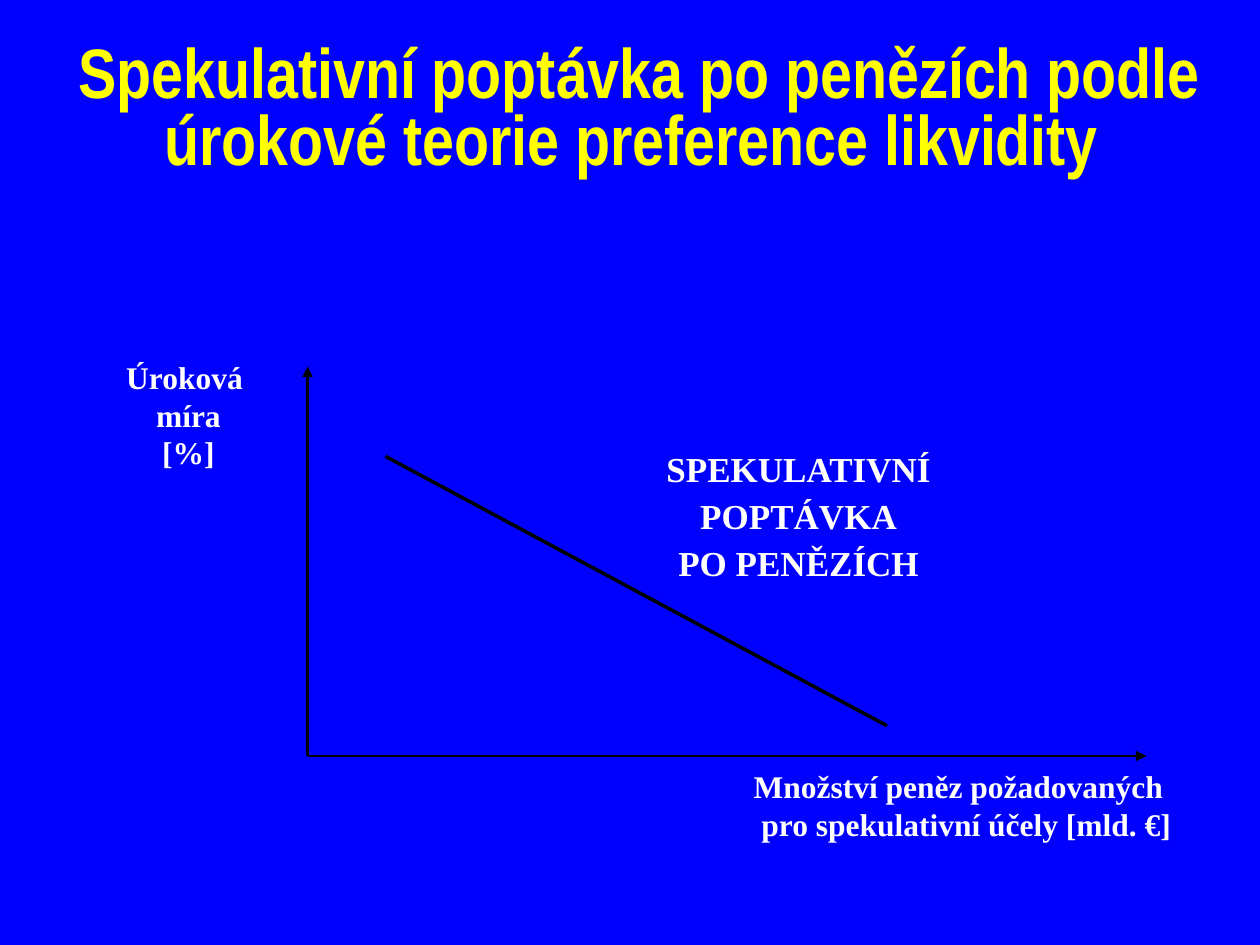
from lxml import etree
from pptx import Presentation
from pptx.dml.color import RGBColor
from pptx.enum.shapes import MSO_CONNECTOR
from pptx.enum.text import MSO_ANCHOR, PP_ALIGN
from pptx.oxml.ns import qn
from pptx.util import Cm, Pt

STRAIGHT = MSO_CONNECTOR.STRAIGHT
CENTER = PP_ALIGN.CENTER
TOP, MIDDLE = MSO_ANCHOR.TOP, MSO_ANCHOR.MIDDLE

BLUE = RGBColor(0x00, 0x00, 0xFF)
YELLOW = RGBColor(0xFF, 0xFF, 0x00)
WHITE = RGBColor(0xFF, 0xFF, 0xFF)
BLACK = RGBColor(0x00, 0x00, 0x00)

ORIGIN = (6.2, 15.24)
RATE_AXIS_END = (6.2, 7.39)
MONEY_AXIS_END = (23.11, 15.24)
DEMAND_START, DEMAND_END = (7.77, 9.2), (17.88, 14.63)


def write_text(text_frame, text, font="Times New Roman", size=18, color=WHITE,
               space_before=0, line_spacing=1.0):
    for index, line in enumerate(text.split("\n")):
        paragraph = text_frame.add_paragraph() if index else text_frame.paragraphs[0]
        paragraph.text = line
        paragraph.alignment = CENTER
        paragraph.line_spacing = line_spacing
        paragraph.space_before = Pt(space_before if index else 0)
        for run in paragraph.runs:
            run.font.name = font
            run.font.size = Pt(size)
            run.font.bold = True
            run.font.color.rgb = color


class DiagramSlide:
    """Draws the labels and lines of an economic diagram on one slide."""

    def __init__(self, presentation, background):
        self.slide = presentation.slides.add_slide(presentation.slide_layouts[6])
        fill = self.slide.background.fill
        fill.solid()
        fill.fore_color.rgb = background

    def label(self, left, top, width, height, text, anchor=TOP, **text_format):
        shape = self.slide.shapes.add_textbox(Cm(left), Cm(top), Cm(width), Cm(height))
        shape.text_frame.word_wrap = True
        shape.text_frame.vertical_anchor = anchor
        write_text(shape.text_frame, text, **text_format)

    def line(self, start, end, width, arrow=False):
        points = [Cm(value) for value in (*start, *end)]
        connector = self.slide.shapes.add_connector(STRAIGHT, *points)
        connector.line.color.rgb = BLACK
        connector.line.width = Pt(width)
        if arrow:
            outline = connector.line._get_or_add_ln()
            etree.SubElement(outline, qn("a:tailEnd"), type="triangle")
        etree.SubElement(connector._element.spPr, qn("a:effectLst"))


def main():
    presentation = Presentation()
    presentation.slide_width, presentation.slide_height = Cm(25.4), Cm(19.05)
    diagram = DiagramSlide(presentation, BLUE)

    diagram.label(0.89, 0.2, 24, 4.11,
                  "Spekulativní poptávka po penězích podle úrokové teorie preference likvidity ",
                  anchor=MIDDLE, font="Arial Narrow", size=40, color=YELLOW, line_spacing=0.8)

    diagram.line(ORIGIN, RATE_AXIS_END, 1.5, arrow=True)
    diagram.line(ORIGIN, MONEY_AXIS_END, 1, arrow=True)
    diagram.line(DEMAND_START, DEMAND_END, 2)

    diagram.label(0.89, 7.09, 5.82, 3.89, "Úroková \nmíra\n[%]")
    diagram.label(12.57, 8.89, 7.06, 3.61, "SPEKULATIVNÍ\nPOPTÁVKA\nPO PENĚZÍCH",
                  size=20, space_before=3)
    diagram.label(14.5, 15.34, 9.8, 2.34,
                  "Množství peněz požadovaných \v pro spekulativní účely [mld. €]")

    presentation.save("out.pptx")


if __name__ == "__main__":
    main()
